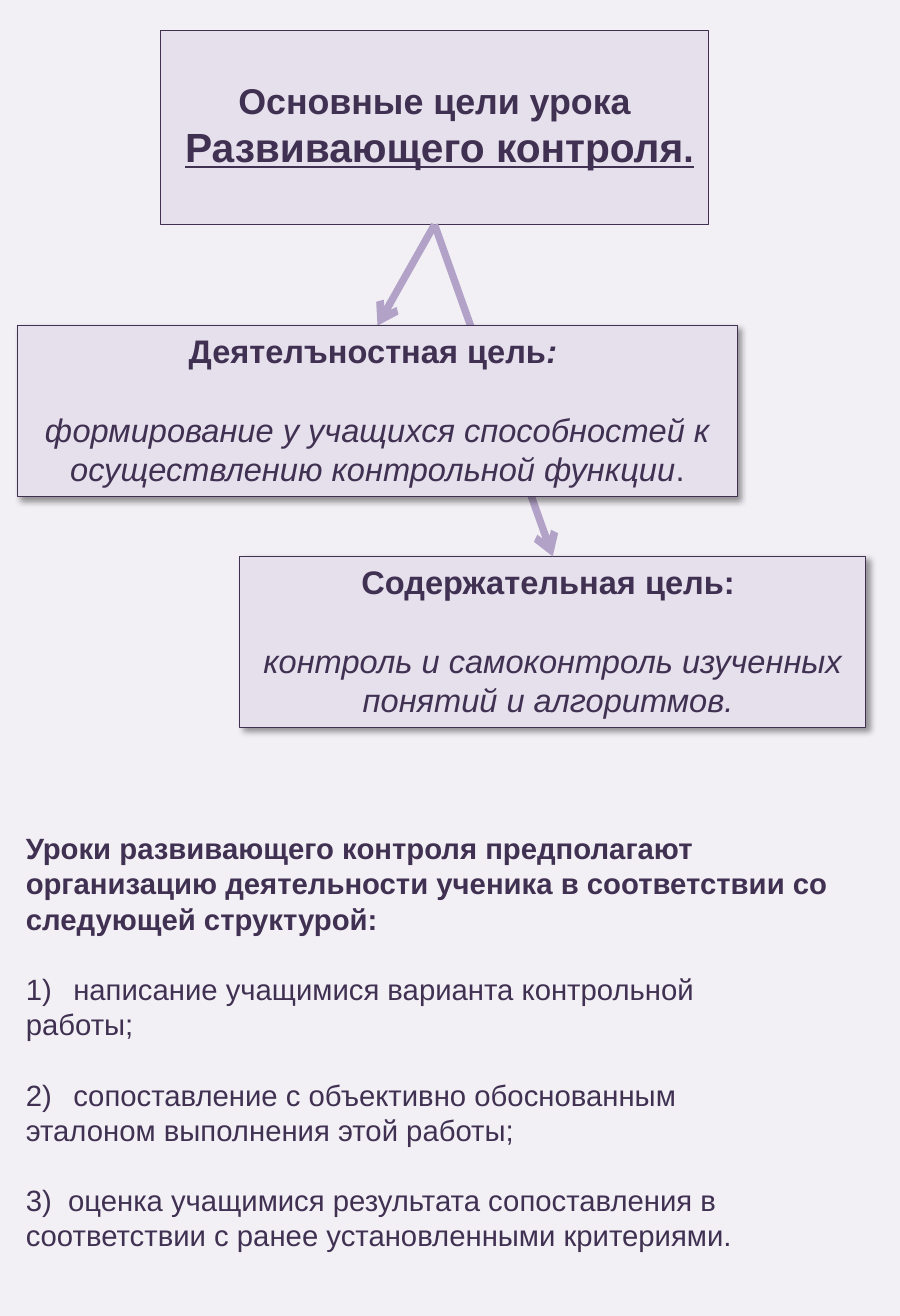
import pptx
import pptx.util
import pptx.dml.color
import pptx.enum.shapes
import pptx.enum.text
import pptx.oxml
import pptx.oxml.ns

Pt = pptx.util.Pt
Kind = pptx.enum.shapes.MSO_SHAPE
Align = pptx.enum.text.PP_ALIGN
NS = pptx.oxml.ns.nsdecls("a")

# Content: run = (text, size, style letters); paragraph = (gap before, number, runs)
WIDE, HIGH = 552.75, 807.87
HANG = 29.2
INK, PALE, LILAC, BACK = "403152", "E6E0EC", "B3A2C7", "F2F0F5"

TITLE = [
    (0, 0, [("Основные цели урока", 22, "b")]),
    (0, 0, [(" ", 22, "b"), ("Развивающего контроля", 25, "bu"), (".", 23, "bu")]),
]
ACTION = [
    (0, 0, [("Деятелъностная цель", 20, "b"), (": ", 20, "bi")]),
    (24, 0, [("формирование у учащихся способностей к осуществлению "
              "контрольной функции", 20, "i"), (".", 20, "")]),
]
TOPIC = [
    (0, 0, [("Содержательная цель: ", 20, "b")]),
    (24, 0, [("контроль и самоконтроль изученных понятий и алгоритмов. ", 20, "i")]),
]
STEPS = [
    (0, 0, [("Уроки развивающего контроля предполагают организацию деятельности "
             "ученика в соответствии со следующей структурой:", 18, "b")]),
    (21.6, 1, [("написание учащимися варианта контрольной", 18, "")]),
    (0, 0, [("работы;", 18, "")]),
    (21.6, 2, [("сопоставление с объективно обоснованным", 18, "")]),
    (0, 0, [("эталоном выполнения этой работы;", 18, "")]),
    (21.6, 0, [("3)  оценка учащимися результата сопоставления в соответствии "
                "с ранее установленными критериями.", 18, "")]),
]

deck = pptx.Presentation()
deck.slide_width, deck.slide_height = Pt(WIDE), Pt(HIGH)
slide = deck.slides.add_slide(deck.slide_layouts[6])


def paint(fill, code):
    fill.solid()
    fill.fore_color.rgb = pptx.dml.color.RGBColor.from_string(code)


def write(shape, paras, align, top=3.6, wrap=True):
    frame = shape.text_frame
    frame.word_wrap = wrap
    frame.vertical_anchor = pptx.enum.text.MSO_ANCHOR.TOP
    frame.margin_left = frame.margin_right = Pt(7.92)
    frame.margin_top, frame.margin_bottom = Pt(top), Pt(3.6)
    for i, (gap, number, runs) in enumerate(paras):
        para = frame.add_paragraph() if i else frame.paragraphs[0]
        para.alignment = align
        para.space_before = Pt(gap)
        if number:
            # Hanging automatic number
            props = para._p.get_or_add_pPr()
            props.set("marL", str(Pt(HANG)))
            props.set("indent", str(-Pt(HANG)))
            props.append(pptx.oxml.parse_xml(
                f'<a:buAutoNum {NS} type="arabicParenR" startAt="{number}"/>'))
        for text, size, style in runs:
            run = para.add_run()
            run.text = text
            font = run.font
            font.name, font.size = "Arial", Pt(size)
            font.bold, font.italic = "b" in style, "i" in style
            font.underline = "u" in style
            paint(font.fill, INK)


def panel(left, top, width, height, paras, shade=True, inset=3.6, wrap=True):
    box = slide.shapes.add_shape(
        Kind.RECTANGLE, Pt(left), Pt(top), Pt(width), Pt(height))
    paint(box.fill, PALE)
    paint(box.line.fill, INK)
    box.line.width = Pt(0.75)
    box.shadow.inherit = False
    if shade:
        effects = box._element.spPr.find(pptx.oxml.ns.qn("a:effectLst"))
        effects.append(pptx.oxml.parse_xml(
            f'<a:outerShdw {NS} blurRad="{Pt(4)}" dist="{Pt(3)}" dir="2700000" '
            'algn="tl" rotWithShape="0"><a:srgbClr val="000000">'
            '<a:alpha val="40000"/></a:srgbClr></a:outerShdw>'))
    write(box, paras, Align.CENTER, inset, wrap)
    return box


def arrow():
    line = slide.shapes.add_connector(
        pptx.enum.shapes.MSO_CONNECTOR.STRAIGHT, 0, 0, 0, 0)
    paint(line.line.fill, LILAC)
    line.line.width = Pt(4.5)
    line.line._get_or_add_ln().append(
        pptx.oxml.parse_xml(f'<a:tailEnd {NS} type="arrow"/>'))
    line._element.spPr.append(pptx.oxml.parse_xml(f"<a:effectLst {NS}/>"))
    return line


# Background
paint(slide.background.fill, BACK)

# Title and goals, with the arrows passing behind the action box
title = panel(98.5, 18.6, 336.8, 119.3, TITLE, False, 30, False)
topic = panel(147.3, 341.6, 384.4, 105, TOPIC)
arrows = [arrow(), arrow()]
action = panel(10.8, 199.9, 442.1, 105, ACTION)
for line, goal in zip(arrows, (action, topic)):
    line.begin_connect(title, 2)
    line.end_connect(goal, 0)

# Lesson structure
steps = slide.shapes.add_textbox(Pt(7.9), Pt(506.3), Pt(540.7), Pt(269.3))
write(steps, STEPS, Align.LEFT)

deck.save("out.pptx")
